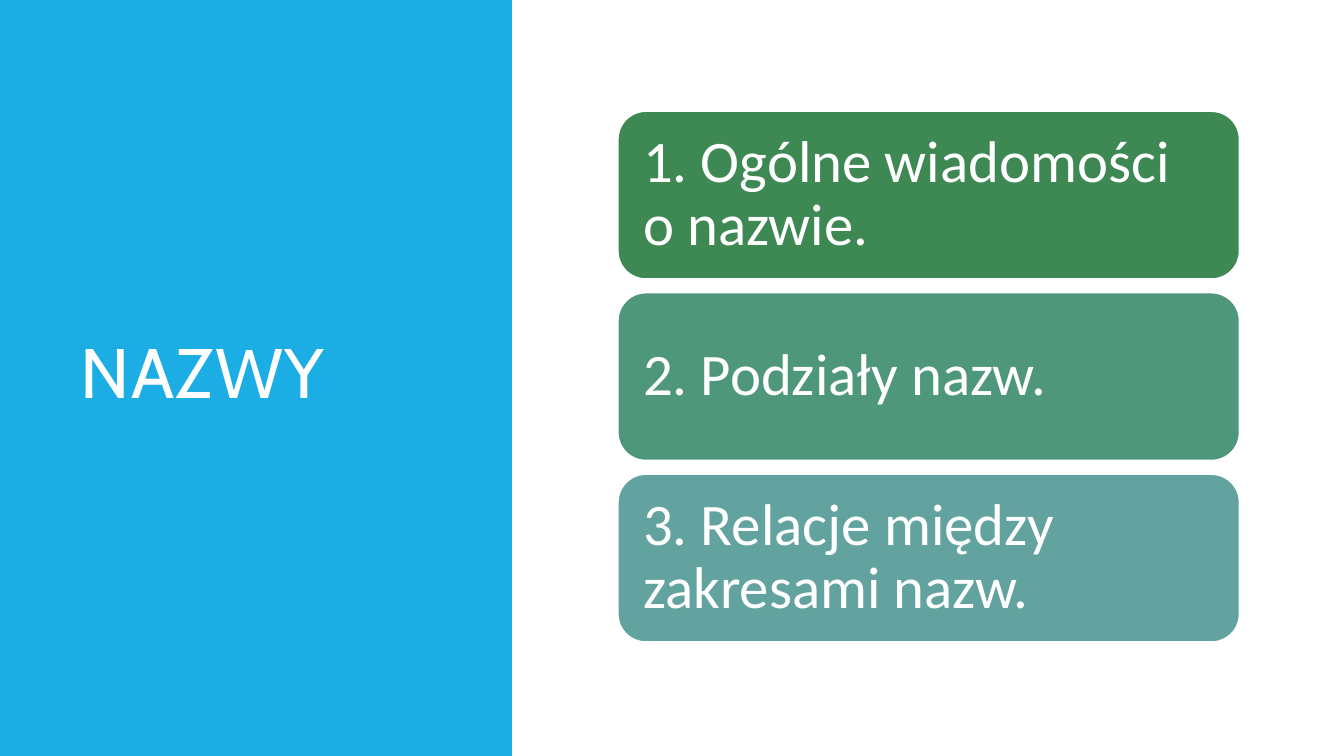
from pptx import Presentation
from pptx.dml.color import RGBColor
from pptx.enum.shapes import MSO_SHAPE
from pptx.enum.text import MSO_ANCHOR, PP_ALIGN
from pptx.util import Cm, Pt

RECTANGLE = MSO_SHAPE.RECTANGLE
ROUNDED = MSO_SHAPE.ROUNDED_RECTANGLE
MIDDLE = MSO_ANCHOR.MIDDLE
LEFT = PP_ALIGN.LEFT

WHITE = "FFFFFF"
BLUE = "1CADE4"
SLIDE_WIDTH, SLIDE_HEIGHT = 33.87, 19.05
PANEL_WIDTH = 12.9

TOPICS = [
    ("1. Ogólne wiadomości o nazwie.", "3E8853"),
    ("2. Podziały nazw.", "4E977B"),
    ("3. Relacje między zakresami nazw.", "62A39F"),
]


def color(hex_code):
    return RGBColor.from_string(hex_code)


def add_block(slide, preset, box, fill, outline=None):
    block = slide.shapes.add_shape(preset, *(Cm(length) for length in box))
    block.shadow.inherit = False
    block.fill.solid()
    block.fill.fore_color.rgb = color(fill)
    if outline:
        block.line.color.rgb = color(outline)
        block.line.width = Pt(1.25)
    else:
        block.line.fill.background()
    return block


def write(holder, text, *, size, font, line_spacing, insets, tracking=0):
    """Fill a shape with left-aligned white text; insets are left, top, right, bottom in cm."""
    frame = holder.text_frame
    frame.word_wrap = True
    frame.vertical_anchor = MIDDLE
    (frame.margin_left, frame.margin_top,
     frame.margin_right, frame.margin_bottom) = (Cm(inset) for inset in insets)
    paragraph = frame.paragraphs[0]
    paragraph.alignment = LEFT
    paragraph.line_spacing = line_spacing
    run = paragraph.add_run()
    run.text = text
    run.font.size = Pt(size)
    run.font.name = font
    run.font.color.rgb = color(WHITE)
    if tracking:
        run.font._element.set("spc", str(tracking))


def add_title_panel(slide, box, text):
    left, top, width, height = box
    margin = 1.78
    add_block(slide, RECTANGLE, box, BLUE)
    title = slide.shapes.add_textbox(Cm(left + margin), Cm(top + margin),
                                     Cm(width - 1.9 * margin), Cm(height - 2 * margin))
    write(title, text, size=50, font="Cabin", line_spacing=0.8,
          insets=(0.25, 0.13, 0.25, 0.13), tracking=100)


def add_topic_list(slide, box, topics, gap=0.34):
    left, top, width, height = box
    card_height = (height - gap * (len(topics) - 1)) / len(topics)
    for index, (text, fill) in enumerate(topics):
        card_top = top + index * (card_height + gap)
        card = add_block(slide, ROUNDED, (left, card_top, width, card_height), fill, WHITE)
        write(card, text, size=42, font="Calibri", line_spacing=0.9,
              insets=(0.43, 0.43, 0.8, 0.43))


def main():
    deck = Presentation()
    deck.slide_width, deck.slide_height = Cm(SLIDE_WIDTH), Cm(SLIDE_HEIGHT)
    slide = deck.slides.add_slide(deck.slide_layouts[6])
    add_title_panel(slide, (0, 0, PANEL_WIDTH, SLIDE_HEIGHT), "NAZWY")
    add_topic_list(slide, (15.57, 2.8, 15.67, 13.38), TOPICS)
    deck.save("out.pptx")


if __name__ == "__main__":
    main()
